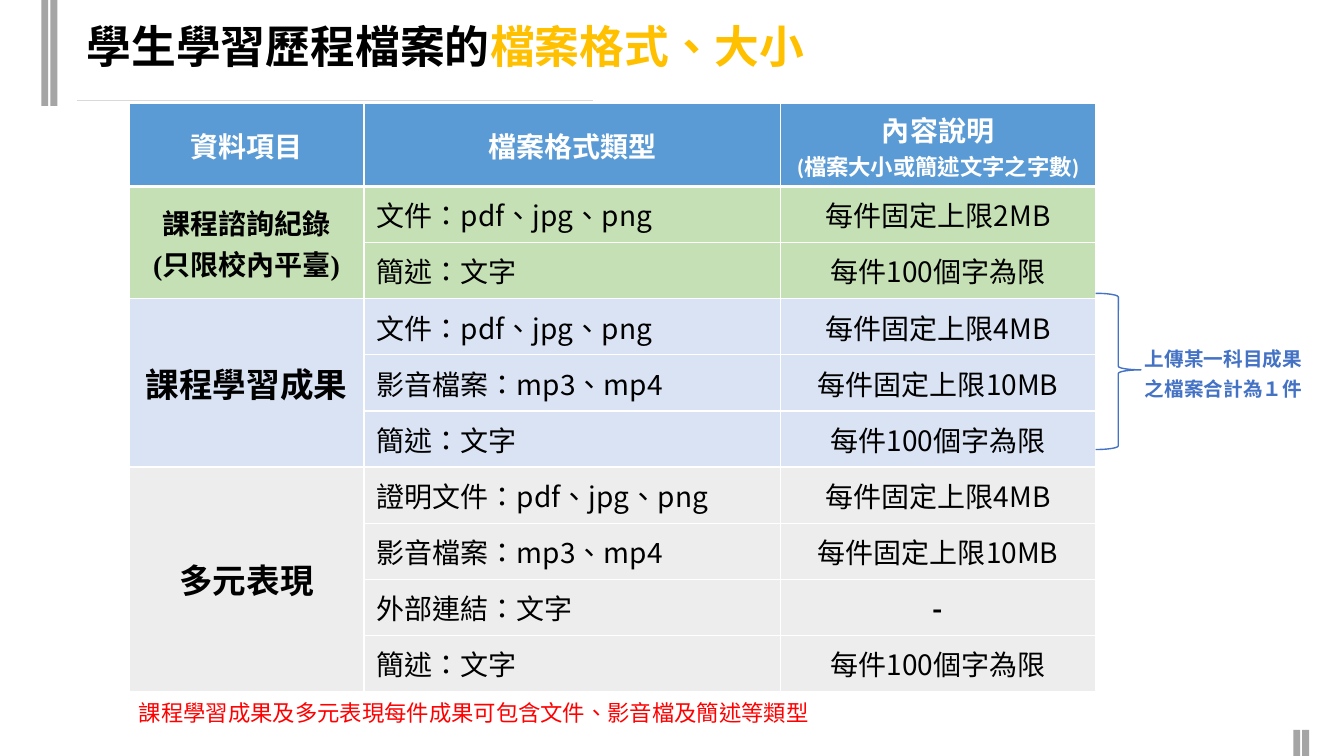
from lxml import etree
from pptx import Presentation
from pptx.dml.color import RGBColor
from pptx.enum.shapes import MSO_CONNECTOR, MSO_SHAPE
from pptx.enum.text import MSO_ANCHOR, MSO_AUTO_SIZE, PP_ALIGN
from pptx.oxml.ns import qn
from pptx.util import Pt

RECT, BRACE = MSO_SHAPE.RECTANGLE, MSO_SHAPE.RIGHT_BRACE
STRAIGHT = MSO_CONNECTOR.STRAIGHT
MIDDLE = MSO_ANCHOR.MIDDLE
LEFT, CENTER = PP_ALIGN.LEFT, PP_ALIGN.CENTER
GROW = MSO_AUTO_SIZE.SHAPE_TO_FIT_TEXT
CJK = "Noto Sans CJK SC"

TITLE = [("學生學習歷程檔案的", "000000"), ("檔案格式、大小", "FFC000")]
HEADERS = [
    [("資料項目", 20)],
    [("檔案格式類型", 20)],
    [("內容說明", 20), ("(檔案大小或簡述文字之字數)", 16)],
]
SECTIONS = [
    ("C5E0B4", [("課程諮詢紀錄", 20), ("(只限校內平臺)", 20)], [
        ("文件：pdf、jpg、png", "每件固定上限2MB"),
        ("簡述：文字", "每件100個字為限"),
    ]),
    ("DAE3F3", [("課程學習成果", 24)], [
        ("文件：pdf、jpg、png", "每件固定上限4MB"),
        ("影音檔案：mp3、mp4", "每件固定上限10MB"),
        ("簡述：文字", "每件100個字為限"),
    ]),
    ("EDEDED", [("多元表現", 24)], [
        ("證明文件：pdf、jpg、png", "每件固定上限4MB"),
        ("影音檔案：mp3、mp4", "每件固定上限10MB"),
        ("外部連結：文字", "-"),
        ("簡述：文字", "每件100個字為限"),
    ]),
]
FOOTNOTE = "課程學習成果及多元表現每件成果可包含文件、影音檔及簡述等類型"
BRACE_NOTE = "上傳某一科目成果之檔案合計為１件"
BARS = [(29.5, 0, 5, 75.6), (36, 0, 5, 75.6),
        (923.8, 521.3, 5, 18.7), (930.2, 521.3, 5, 18.7)]
COLUMNS = [167.8, 297.4, 225.4]
HEADER_HEIGHT, ROW_HEIGHT = 59, 40.1
TABLE_LEFT, TABLE_TOP = 92.2, 74.2


def rgb(value):
    return RGBColor.from_string(value)


def add_run(p, text, color, **fmt):
    r = p.add_run()
    r.text = text
    for key, value in fmt.items():
        setattr(r.font, key, value)
    r.font.color.rgb = rgb(color)
    rPr = r._r.get_or_add_rPr()
    rPr.set("lang", "zh-TW")
    etree.SubElement(rPr, qn("a:ea")).set("typeface", CJK)


def add_text(box, runs, spacing, wrap=True, **fmt):
    tf = s.shapes.add_textbox(*map(Pt, box)).text_frame
    tf.word_wrap = wrap
    tf.auto_size = GROW
    p = tf.paragraphs[0]
    p.line_spacing = spacing
    for text, color in runs:
        add_run(p, text, color, **fmt)


def fill_cell(cell, lines, fill, color, name, bold, align=CENTER, bottom=1):
    margins = {"margin_left": 3, "margin_right": 3, "margin_top": 3.6, "margin_bottom": 3.6}
    for key, value in margins.items():
        setattr(cell, key, Pt(value))
    cell.vertical_anchor = MIDDLE
    tcPr = cell._tc.get_or_add_tcPr()
    for side, width in (("L", 1), ("R", 1), ("T", 1), ("B", bottom)):
        ln = etree.SubElement(tcPr, qn("a:ln" + side), w=str(Pt(width)))
        solid = etree.SubElement(ln, qn("a:solidFill"))
        etree.SubElement(solid, qn("a:srgbClr"), val="FFFFFF")
    cell.fill.solid()
    cell.fill.fore_color.rgb = rgb(fill)
    tf = cell.text_frame
    for i, (text, size) in enumerate(lines):
        p = tf.add_paragraph() if i else tf.paragraphs[0]
        p.alignment = align
        if align == LEFT:
            p._p.get_or_add_pPr().set("marL", str(Pt(6)))
        add_run(p, text, color, name=name, size=Pt(size), bold=bold)


prs = Presentation()
prs.slide_width, prs.slide_height = Pt(960), Pt(540)
s = prs.slides.add_slide(prs.slide_layouts[6])

for box in BARS:
    bar = s.shapes.add_shape(RECT, *map(Pt, box))
    bar.shadow.inherit = False
    bar.fill.solid()
    bar.fill.fore_color.rgb = rgb("A5A5A5")
    bar.line.fill.background()

rule = s.shapes.add_connector(STRAIGHT, Pt(54.7), Pt(71.4), Pt(423.4), Pt(71.4))
rule.line.color.rgb = rgb("D9D9D9")
rule.line.width = Pt(0.5)
etree.SubElement(rule._element.spPr, qn("a:effectLst"))

add_text((54.7, 14.4, 624.2, 42.5), TITLE, 0.9, name=CJK, size=Pt(32), bold=True)

row_count = sum(len(rows) for _, _, rows in SECTIONS)
table = s.shapes.add_table(
    row_count + 1, len(COLUMNS), Pt(TABLE_LEFT), Pt(TABLE_TOP),
    Pt(sum(COLUMNS)), Pt(HEADER_HEIGHT + row_count * ROW_HEIGHT)).table
for column, width in zip(table.columns, COLUMNS):
    column.width = Pt(width)
for i, row in enumerate(table.rows):
    row.height = Pt(ROW_HEIGHT if i else HEADER_HEIGHT)
for col, lines in enumerate(HEADERS):
    fill_cell(table.cell(0, col), lines, "5B9BD5", "FFFFFF", "Calibri", True, bottom=3)

top = 1
for fill, label, rows in SECTIONS:
    table.cell(top, 0).merge(table.cell(top + len(rows) - 1, 0))
    fill_cell(table.cell(top, 0), label, fill, "000000", "Times New Roman", True)
    for i, (file_type, limit) in enumerate(rows, top):
        fill_cell(table.cell(i, 1), [(file_type, 20)], fill, "000000", CJK, False, LEFT)
        fill_cell(table.cell(i, 2), [(limit, 20)], fill, "000000", CJK, limit == "-")
    top += len(rows)

add_text((92.2, 490.3, 515.5, 32.4), [(FOOTNOTE, "FF0000")], 1.3, False, name=CJK, size=Pt(16))
add_text((810.7, 239, 128, 51.1), [(BRACE_NOTE, "4472C4")], 1.3,
         name="Arial", size=Pt(14), bold=True)

brace = s.shapes.add_shape(BRACE, Pt(782.6), Pt(209.5), Pt(32.4), Pt(111.6))
brace.adjustments[0], brace.adjustments[1] = 0.08, 0.49
brace.shadow.inherit = False
brace.fill.background()
brace.line.color.rgb = rgb("4472C4")
brace.line.width = Pt(1)

prs.save("out.pptx")
